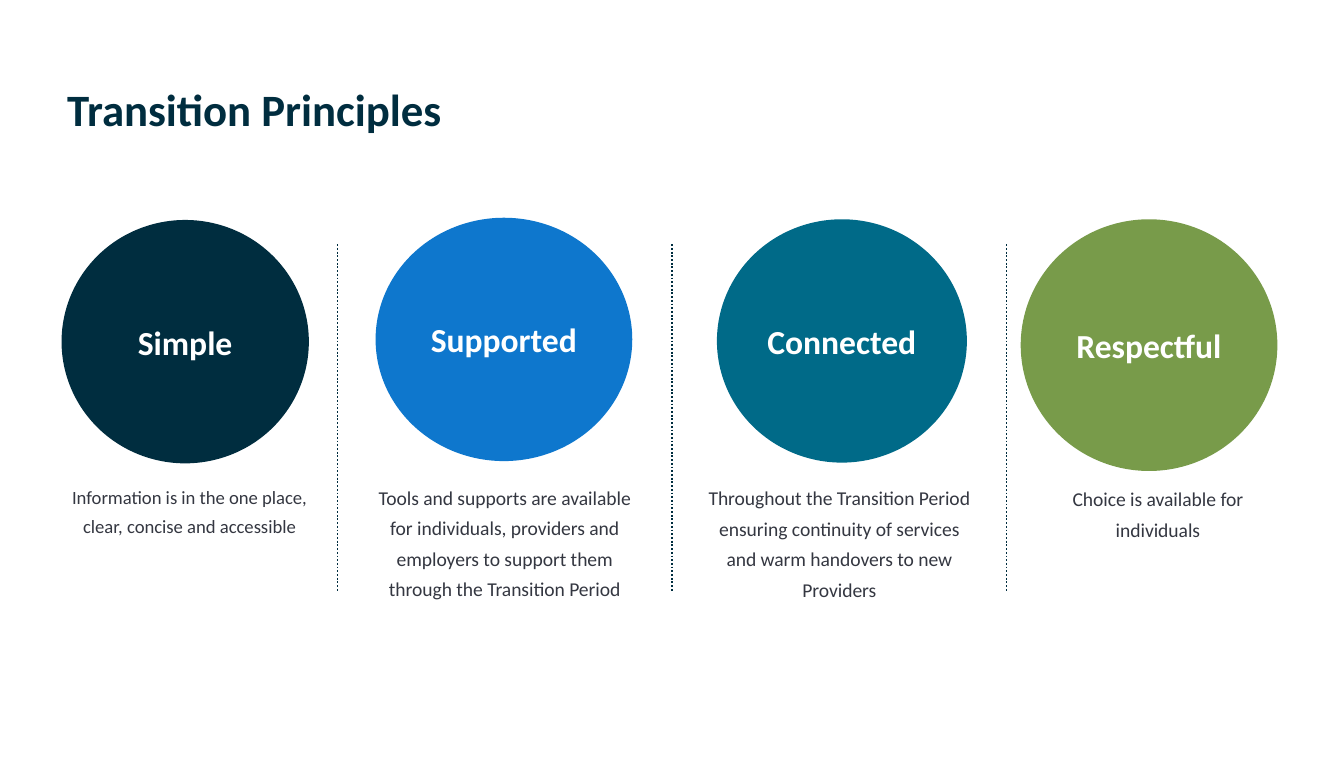
from pptx import Presentation
from pptx.dml.color import RGBColor as RGB
from pptx.enum.dml import MSO_LINE as DASH
from pptx.enum.shapes import MSO_CONNECTOR as CONN, MSO_SHAPE as SHAPE
from pptx.enum.text import MSO_ANCHOR as ANCHOR, MSO_AUTO_SIZE as AUTO, PP_ALIGN as ALIGN
from pptx.oxml.ns import qn
from pptx.util import Pt
from lxml.etree import SubElement

COLORS = {"navy": "002D3F", "blue": "0E77CD", "teal": "006A88",
          "green": "789B4A", "white": "FFFFFF", "text": "343741"}

PRINCIPLES = [
    ("Simple", "navy", (33, 117.8, 132.5, 130.3), (33.8, 256.5, 135.4, 32), 10,
     "Information is in the one place, clear, concise and accessible"),
    ("Supported", "blue", (201.2, 116.6, 137.5, 130.3), (196.3, 256.3, 148.3, 65), 10.5,
     "Tools and supports are available for individuals, providers and employers "
     "to support them through the Transition Period"),
    ("Connected", "teal", (384.1, 117.4, 133.9, 130.3), (376.6, 256.6, 146.2, 65), 10.5,
     "Throughout the Transition Period ensuring continuity of services "
     "and warm handovers to new Providers"),
    ("Respectful", "green", (546.8, 117.4, 137.5, 134.8), (552.6, 257.2, 135.4, 32), 10.5,
     "Choice is available for individuals"),
]


def color(name):
    """Return the named colour."""
    return RGB.from_string(COLORS[name])


def apply(obj, **values):
    """Set each given attribute on an object."""
    for key, value in values.items():
        setattr(obj, key, value)


def write(tf, text, size, name, bold=False, **para):
    """Write one formatted paragraph into a text frame."""
    p = tf.paragraphs[0]
    apply(p, **para)
    r = p.add_run()
    r.text = text
    apply(r.font, name="Calibri", size=Pt(size), bold=bold)
    r.font.color.rgb = color(name)


def set_margins(tf):
    """Remove the inner margins of a text frame."""
    apply(tf, margin_left=0, margin_right=0, margin_top=0, margin_bottom=0)


def add_title(s, text):
    """Place and format the slide title."""
    sp = s.shapes.title
    apply(sp, left=Pt(36), top=Pt(27.4), width=Pt(501), height=Pt(64.8))
    tf = sp.text_frame
    set_margins(tf)
    apply(tf, vertical_anchor=ANCHOR.MIDDLE, auto_size=AUTO.NONE, word_wrap=True)
    write(tf, text, 24, "navy", True, alignment=ALIGN.LEFT, line_spacing=0.9)


def add_circle(s, label, fill, box):
    """Add a filled circle with its principle name."""
    sp = s.shapes.add_shape(SHAPE.OVAL, *map(Pt, box))
    sp.shadow.inherit = False
    sp.fill.solid()
    sp.fill.fore_color.rgb = color(fill)
    sp.line.fill.background()
    sp.text_frame.vertical_anchor = ANCHOR.MIDDLE
    write(sp.text_frame, label, 18, "white", True, alignment=ALIGN.CENTER)


def add_description(s, text, size, box):
    """Add the explanation below a circle."""
    tf = s.shapes.add_textbox(*map(Pt, box)).text_frame
    set_margins(tf)
    apply(tf, word_wrap=True, auto_size=AUTO.SHAPE_TO_FIT_TEXT)
    write(tf, text, size, "text", alignment=ALIGN.CENTER,
          line_spacing=1.3, space_after=Pt(10))


def add_divider(s, x):
    """Add a dotted vertical divider."""
    line = s.shapes.add_connector(CONN.STRAIGHT, Pt(x), Pt(130.8), Pt(x), Pt(316.6))
    apply(line.line, width=Pt(1), dash_style=DASH.ROUND_DOT)
    line.line.color.rgb = color("navy")
    SubElement(line._element.spPr, qn("a:effectLst"))


def main():
    """Build the slide of transition principles."""
    prs = Presentation()
    apply(prs, slide_width=Pt(720), slide_height=Pt(405.36))
    s = prs.slides.add_slide(prs.slide_layouts[5])
    add_title(s, "Transition Principles")
    for i in range(3):
        add_divider(s, 180.8 + i * 179.2)
    for label, fill, circle, box, size, text in PRINCIPLES:
        add_circle(s, label, fill, circle)
        add_description(s, text, size, box)
    prs.save("out.pptx")


if __name__ == "__main__":
    main()
